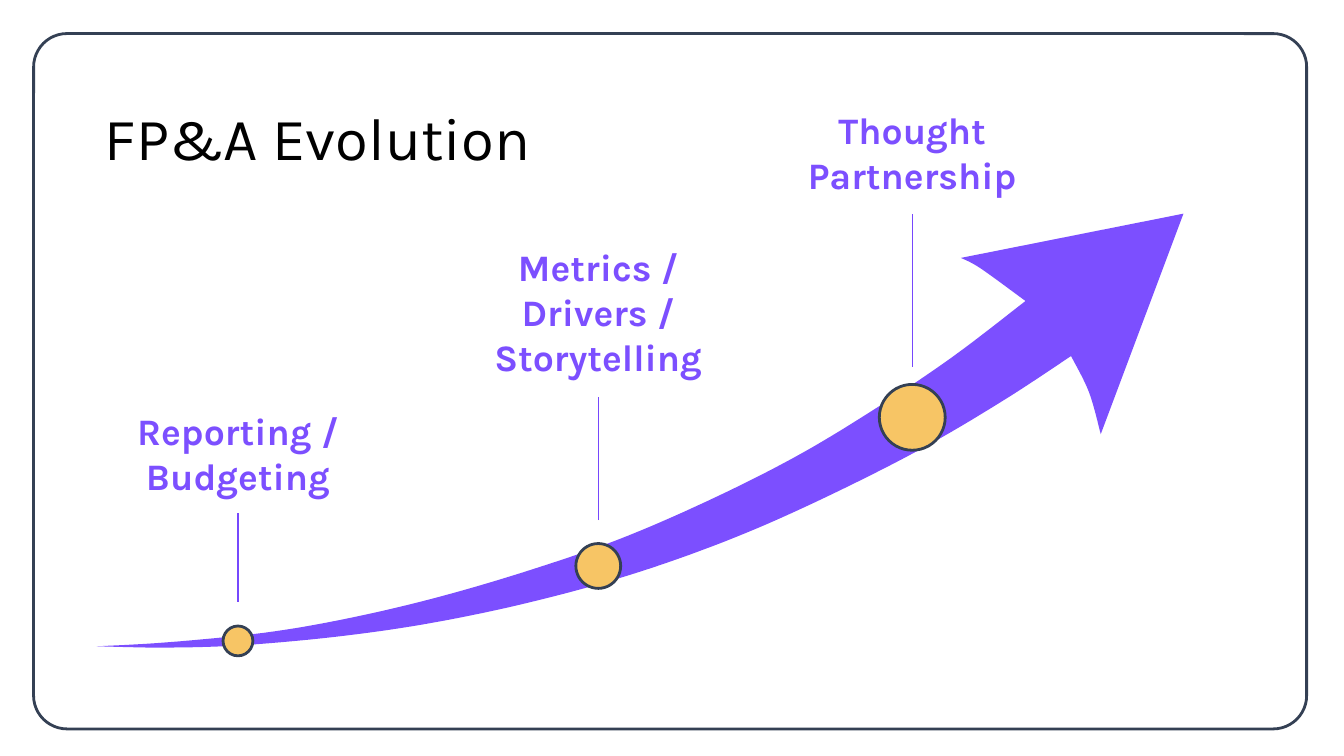
import pptx
import pptx.util
import pptx.dml.color
import pptx.enum.shapes
import pptx.enum.text
import pptx.oxml

Pt = pptx.util.Pt
SHAPES = pptx.enum.shapes.MSO_SHAPE
ALIGN = pptx.enum.text.PP_ALIGN
ANCHOR = pptx.enum.text.MSO_ANCHOR

# Content: lengths in points
TITLE = "FP&A Evolution"
STAGES = [
    dict(label="Reporting / Budgeting", center=(127.5, 343.4), size=16,
         stem=(275, 322.5), top=211.7, height=71.3),
    dict(label="Metrics / Drivers / Storytelling", center=(320.5, 303.2), size=24,
         stem=(212.5, 278.6), top=123.8, height=98.6),
    dict(label="Thought Partnership", center=(488.7, 223.6), size=35.3,
         stem=(114.5, 196.6), top=50.4, height=71.3),
]
LABEL_WIDTH = 157

# Arrow edges, joined at sharp corners and smoothed in between
UPPER_EDGE = [(51.8, 346.3), (89.3, 344.2), (141.1, 339.1), (183.6, 331.9),
              (230.4, 321.1), (280.1, 306.7), (330.5, 289.4), (378.7, 268.6),
              (424.8, 245.5), (465.8, 221), (509, 192.2), (549.4, 161.3)]
LEFT_BARB = [(549.4, 161.3), (525.3, 143.8), (514.8, 138.2)]
TIP = [(634, 114.5)]
RIGHT_BARB = [(589.7, 232.6), (583.4, 210.1), (573.8, 190.8)]
LOWER_EDGE = [(573.8, 190.8), (536.4, 215.3), (491, 241.9), (436.3, 269.3),
              (388.1, 290.2), (337, 308.2), (284.4, 322.6), (233.3, 333.4),
              (185, 340.6), (131.8, 345.6), (89.3, 347), (51.8, 346.3)]

THEME = dict(font="Karla", title_size=32, label_size=20, outline=1.5, stem=0.75,
             ink="000000", paper="FFFFFF", border="344054", purple="7C4FFF",
             stem_color="7648FD", marker="F7C565")


def color(name):
    return pptx.dml.color.RGBColor.from_string(THEME[name])


def paint(shape, fill, line=None):
    shape.shadow.inherit = False
    shape.fill.solid()
    shape.fill.fore_color.rgb = color(fill)
    if line:
        shape.line.color.rgb = color(line)
        shape.line.width = Pt(THEME["outline"])
    else:
        shape.line.fill.background()


def write(box, text, size, ink, bold, align, anchor):
    frame = box.text_frame
    frame.word_wrap = True
    frame.auto_size = pptx.enum.text.MSO_AUTO_SIZE.NONE
    frame.vertical_anchor = anchor
    frame.margin_left = frame.margin_right = Pt(7.2)
    frame.margin_top = frame.margin_bottom = Pt(7.2)
    para = frame.paragraphs[0]
    para.alignment = align
    span = para.add_run()
    span.text = text
    span.font.name = THEME["font"]
    span.font.size = Pt(THEME[size])
    span.font.bold = bold
    span.font.color.rgb = color(ink)


def smooth(points, steps=8):
    """Return points along a Catmull-Rom curve through the given points."""
    padded = [points[0], *points, points[-1]]
    curve = []
    for a, b, c, d in zip(padded, padded[1:], padded[2:], padded[3:]):
        for step in range(steps):
            t = step / steps
            curve.append(tuple(
                q + t / 2 * (r - p + t * (2 * p - 5 * q + 4 * r - s
                                          + t * (3 * (q - r) + s - p)))
                for p, q, r, s in zip(a, b, c, d)))
    return curve + [points[-1]]


deck = pptx.Presentation()
deck.slide_width, deck.slide_height = Pt(720), Pt(405)
page = deck.slides.add_slide(deck.slide_layouts[5])

# Border
border = page.shapes.add_shape(SHAPES.ROUNDED_RECTANGLE,
                               Pt(18), Pt(18), Pt(682), Pt(372.5))
border.adjustments[0] = 0.048
paint(border, "paper", "border")

# Growing arrow
outline = (smooth(UPPER_EDGE) + smooth(LEFT_BARB) + TIP
           + smooth(RIGHT_BARB) + smooth(LOWER_EDGE))
start, *rest = [(Pt(x), Pt(y)) for x, y in outline]
builder = page.shapes.build_freeform(*start)
builder.add_line_segments(rest, close=True)
paint(builder.convert_to_shape(), "purple")

# Stages: marker, stem and label share one center line
for stage in STAGES:
    x, y = stage["center"]
    size = stage["size"]
    marker = page.shapes.add_shape(SHAPES.OVAL, Pt(x - size / 2), Pt(y - size / 2),
                                   Pt(size), Pt(size))
    paint(marker, "marker", "border")

    top, bottom = stage["stem"]
    stem = page.shapes.add_connector(pptx.enum.shapes.MSO_CONNECTOR.STRAIGHT,
                                     Pt(x), Pt(bottom), Pt(x), Pt(top))
    stem.line.color.rgb = color("stem_color")
    stem.line.width = Pt(THEME["stem"])
    stem.element.spPr.append(pptx.oxml.parse_xml(
        '<a:effectLst xmlns:a="http://schemas.openxmlformats.org/drawingml/2006/main"/>'))

    label = page.shapes.add_textbox(Pt(x - LABEL_WIDTH / 2), Pt(stage["top"]),
                                    Pt(LABEL_WIDTH), Pt(stage["height"]))
    write(label, stage["label"], "label_size", "purple", True, ALIGN.CENTER, ANCHOR.TOP)

# Title, brought in front of the border
title = page.shapes.title
title.left, title.top, title.width, title.height = Pt(49), Pt(54), Pt(276.5), Pt(45.4)
write(title, TITLE, "title_size", "ink", False, ALIGN.LEFT, ANCHOR.BOTTOM)
title.element.getparent().append(title.element)

deck.save("out.pptx")
